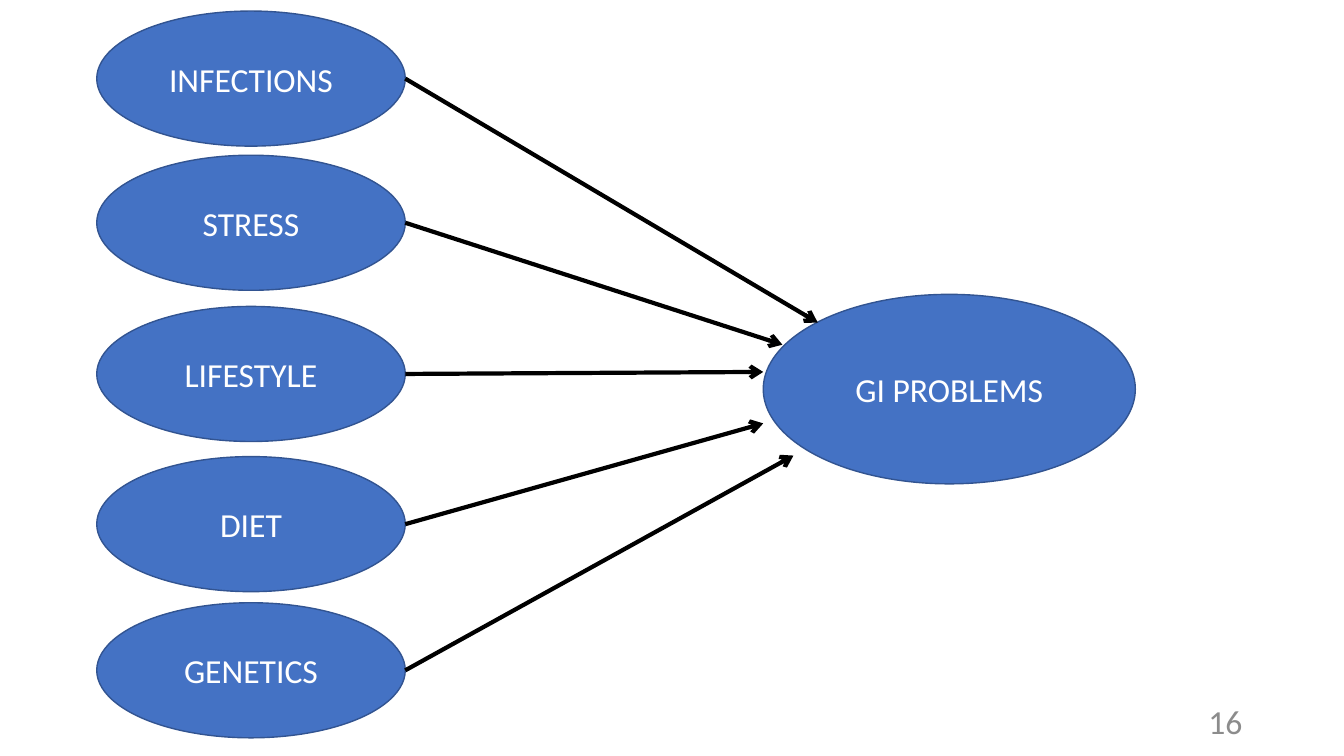
from lxml import etree
from pptx import Presentation
from pptx.dml.color import RGBColor
from pptx.enum.shapes import MSO_CONNECTOR, MSO_SHAPE
from pptx.enum.text import MSO_ANCHOR, PP_ALIGN
from pptx.oxml.ns import qn
from pptx.util import Inches, Pt

ELLIPSE = MSO_SHAPE.OVAL
STRAIGHT = MSO_CONNECTOR.STRAIGHT
MIDDLE = MSO_ANCHOR.MIDDLE
CENTER, RIGHT = PP_ALIGN.CENTER, PP_ALIGN.RIGHT

BLUE, DARK_BLUE = "4472C4", "325491"
WHITE, BLACK, GRAY = "FFFFFF", "000000", "8C8C8C"

CAUSES_BOX = (0.96, 0.11, 3.06, 7.21)
CAUSE_HEIGHT = 1.34
PROBLEM_BOX = (7.57, 2.92, 3.69, 1.88)
NUMBER_BOX = (9.42, 6.95, 3, 0.4)

# Each cause: label, top within the causes box, arrow tip within the problem box
CAUSES = [
    ("INFECTIONS", 0, (0.54, 0.28)),
    ("STRESS", 1.43, (0.19, 0.5)),
    ("LIFESTYLE", 2.93, (0, 0.77)),
    ("DIET", 4.42, (0, 1.28)),
    ("GENETICS", 5.87, (0.3, 1.6)),
]


def color(hex_value):
    """Return the colour for a hex string."""
    return RGBColor.from_string(hex_value)


def write_text(frame, text, hex_value, alignment):
    """Write one vertically centred line of text into a frame."""
    frame.word_wrap = True
    frame.vertical_anchor = MIDDLE
    paragraph = frame.paragraphs[0]
    paragraph.alignment = alignment
    run = paragraph.add_run()
    run.text = text
    run.font.name = "Calibri"
    run.font.size = Pt(24)
    run.font.color.rgb = color(hex_value)


def add_bubble(slide, box, label):
    """Add a labelled blue ellipse that fills the box."""
    bubble = slide.shapes.add_shape(ELLIPSE, *map(Inches, box))
    bubble.shadow.inherit = False
    bubble.fill.solid()
    bubble.fill.fore_color.rgb = color(BLUE)
    bubble.line.color.rgb = color(DARK_BLUE)
    bubble.line.width = Pt(1)
    write_text(bubble.text_frame, label, WHITE, CENTER)


def add_arrow(slide, start, end):
    """Add a black arrow from start to end."""
    arrow = slide.shapes.add_connector(STRAIGHT, *map(Inches, (*start, *end)))
    arrow.line.color.rgb = color(BLACK)
    arrow.line.width = Pt(3)
    etree.SubElement(arrow.line._get_or_add_ln(), qn("a:tailEnd"), type="arrow")
    etree.SubElement(arrow._element.spPr, qn("a:effectLst"))


def add_causes(slide, box, problem_box):
    """Add the column of causes, each with an arrow to the problem."""
    left, top, width, _ = box
    problem_left, problem_top, _, _ = problem_box
    for label, offset, (tip_x, tip_y) in CAUSES:
        cause_top = top + offset
        add_bubble(slide, (left, cause_top, width, CAUSE_HEIGHT), label)
        start = (left + width, cause_top + CAUSE_HEIGHT / 2)
        add_arrow(slide, start, (problem_left + tip_x, problem_top + tip_y))


def add_slide_number(slide, box, number):
    """Add the gray slide number at the right of the box."""
    number_box = slide.shapes.add_textbox(*map(Inches, box))
    write_text(number_box.text_frame, number, GRAY, RIGHT)


def main():
    """Build and save the slide."""
    deck = Presentation()
    deck.slide_width, deck.slide_height = Inches(13.33), Inches(7.5)
    slide = deck.slides.add_slide(deck.slide_layouts[6])
    add_slide_number(slide, NUMBER_BOX, "16")
    add_bubble(slide, PROBLEM_BOX, "GI PROBLEMS")
    add_causes(slide, CAUSES_BOX, PROBLEM_BOX)
    deck.save("out.pptx")


if __name__ == "__main__":
    main()
